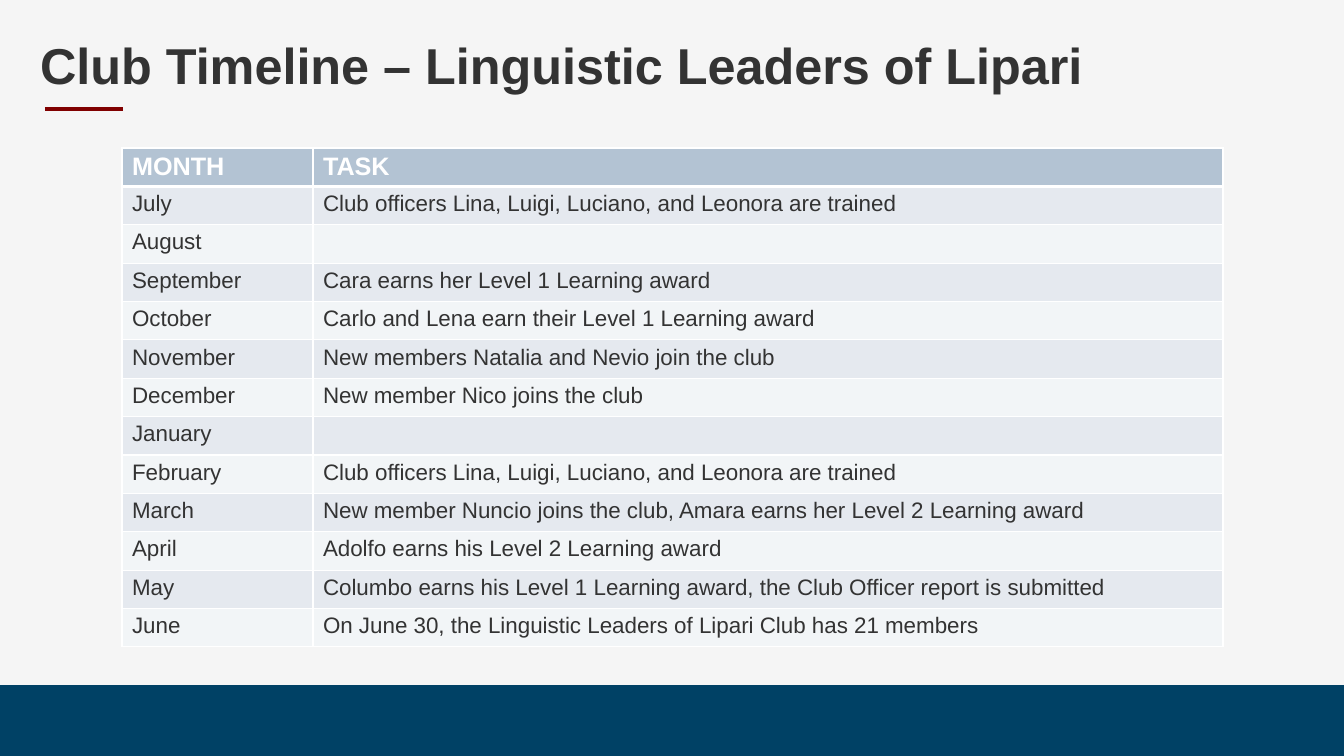
from dataclasses import dataclass

from lxml import etree
from pptx import Presentation
from pptx import util as u
from pptx.dml.color import RGBColor
from pptx.enum import shapes, text
from pptx.oxml import ns

TASKS = [
    ("MONTH", "TASK"),
    ("July", "Club officers Lina, Luigi, Luciano, and Leonora are trained"),
    ("August", ""),
    ("September", "Cara earns her Level 1 Learning award"),
    ("October", "Carlo and Lena earn their Level 1 Learning award"),
    ("November", "New members Natalia and Nevio join the club"),
    ("December", "New member Nico joins the club"),
    ("January", ""),
    ("February", "Club officers Lina, Luigi, Luciano, and Leonora are trained"),
    ("March", "New member Nuncio joins the club, Amara earns her Level 2 Learning award"),
    ("April", "Adolfo earns his Level 2 Learning award"),
    ("May", "Columbo earns his Level 1 Learning award, the Club Officer report is submitted"),
    ("June", "On June 30, the Linguistic Leaders of Lipari Club has 21 members"),
]


@dataclass(frozen=True)
class Theme:
    """Colours, font and type sizes of the slide."""
    back: str = "F5F5F5"
    navy: str = "004165"
    red: str = "800000"
    ink: str = "333333"
    white: str = "FFFFFF"
    head: str = "B3C3D3"
    bands: tuple = ("F2F5F7", "E5E9EF")
    font: str = "Arial"
    title: int = 36
    label: int = 18
    body: int = 16


LOOK = Theme()


def px(count):
    """Turn pixels into EMU."""
    return u.Emu(round(count * 914400 / 100.8))


def rgb(code):
    """Turn a hex code into a colour."""
    return RGBColor.from_string(code)


def paint(fill, code):
    """Fill with one solid colour."""
    fill.solid()
    fill.fore_color.rgb = rgb(code)


def style(frame, size, code, bold=False):
    """Format every run of a text frame."""
    for para in frame.paragraphs:
        for run in para.runs:
            font = run.font
            font.name, font.size, font.bold = LOOK.font, u.Pt(size), bold
            font.color.rgb = rgb(code)


def add_title(slide, words):
    """Place and format the title."""
    title = slide.shapes.title
    title.left, title.top, title.width, title.height = map(px, (30, 32, 1284, 72))
    frame = title.text_frame
    frame.text = words
    frame.word_wrap = True
    frame.auto_size = text.MSO_AUTO_SIZE.NONE
    frame.vertical_anchor = text.MSO_ANCHOR.MIDDLE
    para = frame.paragraphs[0]
    para.alignment = text.PP_ALIGN.LEFT
    para.line_spacing = 0.9
    style(frame, LOOK.title, LOOK.ink, True)


def add_band(slide):
    """Draw the footer band."""
    band = slide.shapes.add_shape(
        shapes.MSO_SHAPE.RECTANGLE, 0, px(685), px(1344), px(71))
    band.shadow.inherit = False
    paint(band.fill, LOOK.navy)
    band.line.fill.background()


def add_rule(slide):
    """Draw the short line below the title."""
    rule = slide.shapes.add_connector(
        shapes.MSO_CONNECTOR.STRAIGHT, px(45), px(109), px(123), px(109))
    rule.line.color.rgb = rgb(LOOK.red)
    rule.line.width = u.Pt(2.25)
    etree.SubElement(rule._element.spPr, ns.qn("a:effectLst"))


def edge(cell, sides):
    """Give a cell white borders of the given point widths."""
    props = cell._tc.get_or_add_tcPr()
    for spot, (side, width) in enumerate(sides.items()):
        line = etree.Element(ns.qn(f"a:ln{side}"), w=str(u.Pt(width)))
        solid = etree.SubElement(line, ns.qn("a:solidFill"))
        etree.SubElement(solid, ns.qn("a:srgbClr"), val=LOOK.white)
        props.insert(spot, line)


def add_tasks(slide):
    """Build the table of months and tasks."""
    frame = slide.shapes.add_table(
        len(TASKS), 2, px(122), px(148), px(1101), px(499))
    table = frame.table
    for col, width in zip(table.columns, (191, 910)):
        col.width = px(width)
    for row, words in enumerate(TASKS):
        head = row == 0
        for col, word in enumerate(words):
            cell = table.cell(row, col)
            cell.text_frame.text = word
            cell.margin_bottom = px(2)
            paint(cell.fill, LOOK.head if head else LOOK.bands[row % 2])
            edge(cell, {"L": 1, "R": 1, "T": 3 if row == 1 else 1, "B": 3 if head else 1})
            if head:
                style(cell.text_frame, LOOK.label, LOOK.white, True)
            else:
                style(cell.text_frame, LOOK.body, LOOK.ink)


def main():
    """Build and save the slide."""
    deck = Presentation()
    deck.slide_width, deck.slide_height = px(1344), px(756)
    slide = deck.slides.add_slide(deck.slide_layouts[5])
    paint(slide.background.fill, LOOK.back)
    add_band(slide)
    add_rule(slide)
    add_title(slide, "Club Timeline – Linguistic Leaders of Lipari")
    add_tasks(slide)
    deck.save("out.pptx")


if __name__ == "__main__":
    main()
